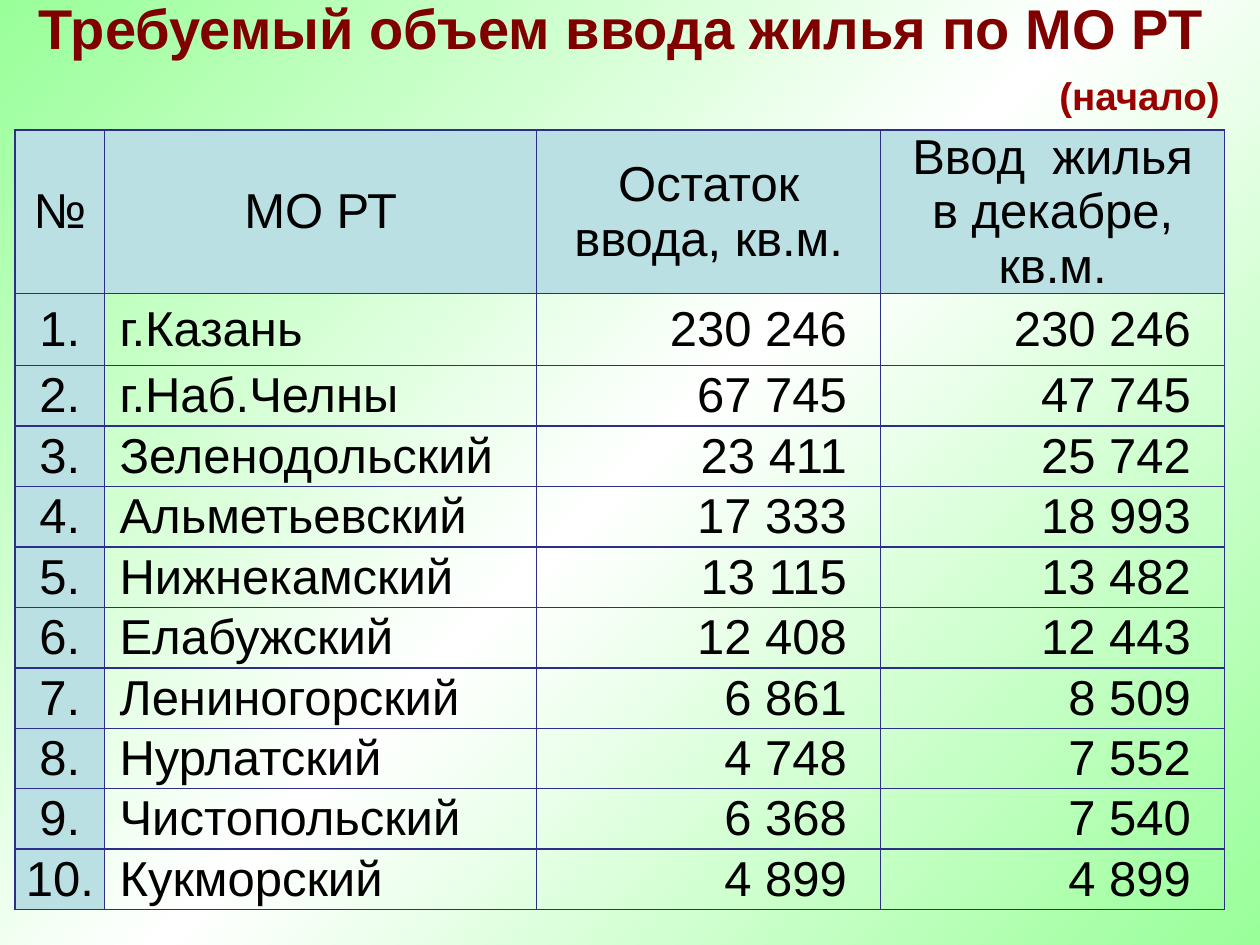
import lxml.etree
import pptx
import pptx.util
import pptx.dml.color
import pptx.enum.text
import pptx.oxml
import pptx.oxml.ns

Inches, Pt = pptx.util.Inches, pptx.util.Pt
ALIGN = pptx.enum.text.PP_ALIGN
ANCHOR = pptx.enum.text.MSO_ANCHOR

TITLE = "Требуемый объем ввода жилья по МО РТ"
PART_LABEL = "(начало)"
HEADERS = ["№", "МО РТ", "Остаток ввода, кв.м.", "Ввод  жилья\nв декабре, кв.м."]
DISTRICTS = [
    ("г.Казань", "230 246", "230 246"),
    ("г.Наб.Челны", "67 745", "47 745"),
    ("Зеленодольский", "23 411", "25 742"),
    ("Альметьевский", "17 333", "18 993"),
    ("Нижнекамский", "13 115", "13 482"),
    ("Елабужский", "12 408", "12 443"),
    ("Лениногорский", "6 861", "8 509"),
    ("Нурлатский", "4 748", "7 552"),
    ("Чистопольский", "6 368", "7 540"),
    ("Кукморский", "4 899", "4 899"),
]
COLUMN_WIDTHS = [0.71, 3.43, 2.73, 2.73]
ROW_HEIGHTS = [1.22, 0.57] + [0.48] * (len(DISTRICTS) - 1)

THEME = {
    "font": "Arial",
    "title": {"size": 32, "color": "800000", "bold": True},
    "label": {"size": 22, "color": "990000", "bold": True},
    "cell": {"size": 28, "color": "000000", "bold": False},
    "head_fill": "BBE0E3",
    "border": "2D2D8A",
    "background": [(0, "99FF99"), (50, "FFFFFF"), (100, "99FF99")],
}
# Alignment and margins (left, top, right, bottom) by the role of a cell
CELL_ROLES = {
    "header": (ALIGN.CENTER, (0.04, 0, 0.04, 0)),
    "number": (ALIGN.CENTER, (0, 0, 0, 0)),
    "name": (ALIGN.LEFT, (0.12, 0, 0.16, 0)),
    "value": (ALIGN.RIGHT, (0.12, 0, 0.27, 0)),
}
MARGINS = ("margin_left", "margin_top", "margin_right", "margin_bottom")


def set_all(target, values):
    for name, value in values.items():
        setattr(target, name, value)


def write(frame, text, style, align):
    """Fill a text frame, one paragraph a line, in a theme style."""
    frame.text = text
    for para in frame.paragraphs:
        para.alignment = align
        for span in para.runs:
            set_all(span.font, {"name": THEME["font"], "size": Pt(style["size"]),
                                "bold": style["bold"]})
            span.font.color.rgb = pptx.dml.color.RGBColor.from_string(style["color"])


def paint_background(page):
    fill = page.background.fill
    fill.gradient()
    fill.gradient_angle = 315  # counter-clockwise: top left to bottom right
    stops = page.background._cSld.find(".//" + pptx.oxml.ns.qn("a:gsLst"))
    for stop in list(stops):
        stops.remove(stop)
    for percent, color in THEME["background"]:
        stop = lxml.etree.SubElement(stops, pptx.oxml.ns.qn("a:gs"), pos=str(percent * 1000))
        lxml.etree.SubElement(stop, pptx.oxml.ns.qn("a:srgbClr"), val=color)


def add_borders(cell):
    properties = cell._tc.get_or_add_tcPr()
    for index, side in enumerate("LRTB"):
        properties.insert(index, pptx.oxml.parse_xml(
            f'<a:ln{side} {pptx.oxml.ns.nsdecls("a")} w="{Pt(1)}"><a:solidFill>'
            f'<a:srgbClr val="{THEME["border"]}"/></a:solidFill></a:ln{side}>'))


def format_cell(cell, text, role):
    align, margins = CELL_ROLES[role]
    write(cell.text_frame, text, THEME["cell"], align)
    set_all(cell, dict(zip(MARGINS, map(Inches, margins))))
    cell.vertical_anchor = ANCHOR.MIDDLE
    if role in ("header", "number"):
        cell.fill.solid()
        cell.fill.fore_color.rgb = pptx.dml.color.RGBColor.from_string(THEME["head_fill"])
    else:
        cell.fill.background()
    add_borders(cell)


def add_district_table(page):
    frame = page.shapes.add_table(
        len(ROW_HEIGHTS), len(COLUMN_WIDTHS), Inches(0.12), Inches(1.03),
        Inches(sum(COLUMN_WIDTHS)), Inches(sum(ROW_HEIGHTS)))
    table = frame.table
    set_all(table, {"first_row": False, "horz_banding": False})
    for column, width in zip(table.columns, COLUMN_WIDTHS):
        column.width = Inches(width)
    for row, height in zip(table.rows, ROW_HEIGHTS):
        row.height = Inches(height)
    for column, text in enumerate(HEADERS):
        format_cell(table.cell(0, column), text, "header")
    for number, district in enumerate(DISTRICTS, 1):
        texts = (f"{number}.", *district)
        for column, role in enumerate(("number", "name", "value", "value")):
            format_cell(table.cell(number, column), texts[column], role)


def main():
    deck = pptx.Presentation()
    set_all(deck, {"slide_width": Inches(10), "slide_height": Inches(7.5)})
    page = deck.slides.add_slide(deck.slide_layouts[5])
    paint_background(page)

    title = page.shapes.title
    set_all(title, {"left": Inches(0), "top": Inches(0.15),
                    "width": Inches(9.86), "height": Inches(0.34)})
    write(title.text_frame, TITLE, THEME["title"], ALIGN.CENTER)
    set_all(title.text_frame, {"vertical_anchor": ANCHOR.TOP, "word_wrap": True,
                               "auto_size": pptx.enum.text.MSO_AUTO_SIZE.NONE})
    set_all(title.text_frame.paragraphs[0], {"line_spacing": 0.45, "space_before": Pt(7)})

    add_district_table(page)

    label = page.shapes.add_textbox(Inches(8.31), Inches(0.52), Inches(1.5), Inches(0.47))
    label.text_frame.word_wrap = True
    write(label.text_frame, PART_LABEL, THEME["label"], ALIGN.LEFT)

    deck.save("out.pptx")


if __name__ == "__main__":
    main()
